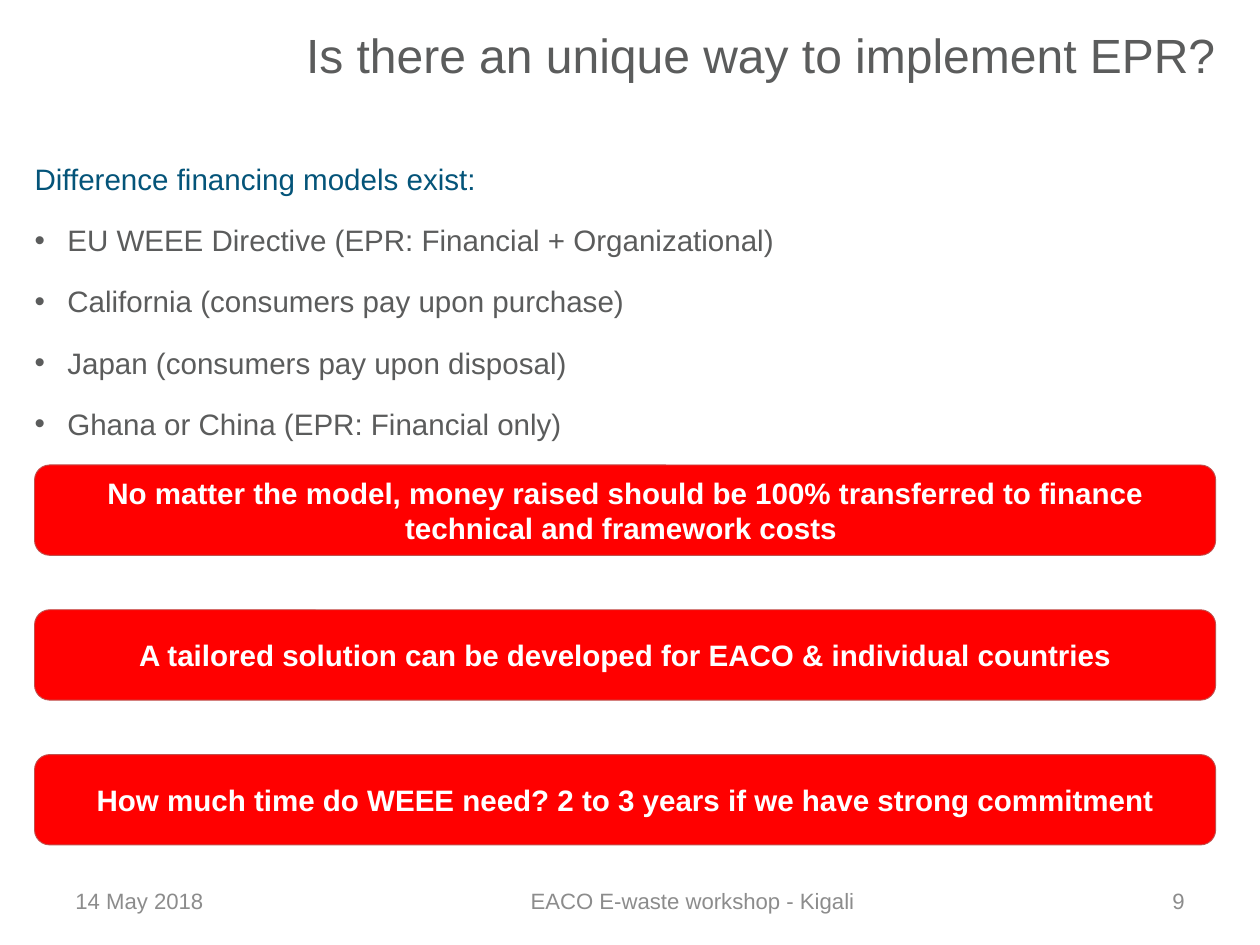
from pptx import Presentation
from pptx.dml.color import RGBColor
from pptx.enum.shapes import MSO_SHAPE
from pptx.enum.text import MSO_ANCHOR, PP_ALIGN
from pptx.oxml.ns import qn
from pptx.util import Inches, Pt
from lxml import etree

LEFT, CENTER, RIGHT = PP_ALIGN.LEFT, PP_ALIGN.CENTER, PP_ALIGN.RIGHT
TOP, MIDDLE = MSO_ANCHOR.TOP, MSO_ANCHOR.MIDDLE
ROUNDED = MSO_SHAPE.ROUNDED_RECTANGLE

COLORS = {
    "text": "5B5C5C",
    "heading": "045479",
    "footer": "8C8C8C",
    "banner": "FF0000",
    "banner_edge": "C0504D",
    "white": "FFFFFF",
}


def rgb(name):
    return RGBColor.from_string(COLORS[name])


def write(paragraph, text, *, size=24, color="text", bold=False, align=LEFT,
          bullet=False, before=0, spacing=1.0):
    if bullet:
        properties = paragraph._p.get_or_add_pPr()
        properties.set("marL", str(Inches(0.37)))
        properties.set("indent", str(Inches(-0.37)))
        etree.SubElement(properties, qn("a:buFont"), typeface="Arial")
        etree.SubElement(properties, qn("a:buChar"), char="•")
    paragraph.alignment = align
    paragraph.line_spacing = spacing
    paragraph.space_before = Pt(before)
    run = paragraph.add_run()
    run.text = text
    run.font.name = "Arial"
    run.font.size = Pt(size)
    run.font.bold = bold
    run.font.color.rgb = rgb(color)


class SlideBuilder:
    def __init__(self, slide):
        self.slide = slide

    def text_box(self, left, top, width, height, anchor=TOP, inset=(0, 0)):
        box = self.slide.shapes.add_textbox(
            Inches(left), Inches(top), Inches(width), Inches(height))
        frame = box.text_frame
        frame.word_wrap = True
        frame.vertical_anchor = anchor
        frame.margin_left = frame.margin_right = Inches(inset[0])
        frame.margin_top = frame.margin_bottom = Inches(inset[1])
        return frame

    def title(self, text):
        frame = self.text_box(2.07, 0.29, 11.65, 1.26)
        write(frame.paragraphs[0], text, size=39, align=RIGHT)

    def models(self, heading, items):
        frame = self.text_box(0.39, 1.82, 13.33, 3.3)
        write(frame.paragraphs[0], heading, color="heading")
        for item in items:
            write(frame.add_paragraph(), item, bullet=True, before=6.5, spacing=1.5)

    def banner(self, text, top):
        banner = self.slide.shapes.add_shape(
            ROUNDED, Inches(0.39), Inches(top), Inches(13.33), Inches(1.02))
        banner.shadow.inherit = False
        banner.fill.solid()
        banner.fill.fore_color.rgb = rgb("banner")
        banner.line.color.rgb = rgb("banner_edge")
        banner.line.width = Pt(0.75)
        frame = banner.text_frame
        frame.word_wrap = True
        frame.vertical_anchor = MIDDLE
        write(frame.paragraphs[0], text, color="white", bold=True, align=CENTER)

    def footer(self, text, left, width, align):
        frame = self.text_box(left, 9.89, width, 0.57, MIDDLE, (0.14, 0.07))
        write(frame.paragraphs[0], text, size=18, color="footer", align=align)


def main():
    deck = Presentation()
    deck.slide_width = Inches(14.22)
    deck.slide_height = Inches(10.67)
    builder = SlideBuilder(deck.slides.add_slide(deck.slide_layouts[6]))

    # Title and financing models
    builder.title("Is there an unique way to implement EPR?")
    builder.models("Difference financing models exist:", [
        "EU WEEE Directive (EPR: Financial + Organizational)",
        "California (consumers pay upon purchase)",
        "Japan (consumers pay upon disposal)",
        "Ghana or China (EPR: Financial only)",
    ])

    # Footer
    builder.footer("14 May 2018", 0.71, 2.23, LEFT)
    builder.footer("EACO E-waste workshop - Kigali", 3.17, 9.29, CENTER)
    builder.footer("9", 12.62, 0.89, RIGHT)

    # Key messages
    messages = [
        "No matter the model, money raised should be 100% transferred to finance "
        "technical and framework costs ",
        "A tailored solution can be developed for EACO & individual countries",
        "How much time do WEEE need? 2 to 3 years if we have strong commitment",
    ]
    for index, message in enumerate(messages):
        builder.banner(message, 5.25 + index * 1.635)

    deck.save("out.pptx")


if __name__ == "__main__":
    main()
